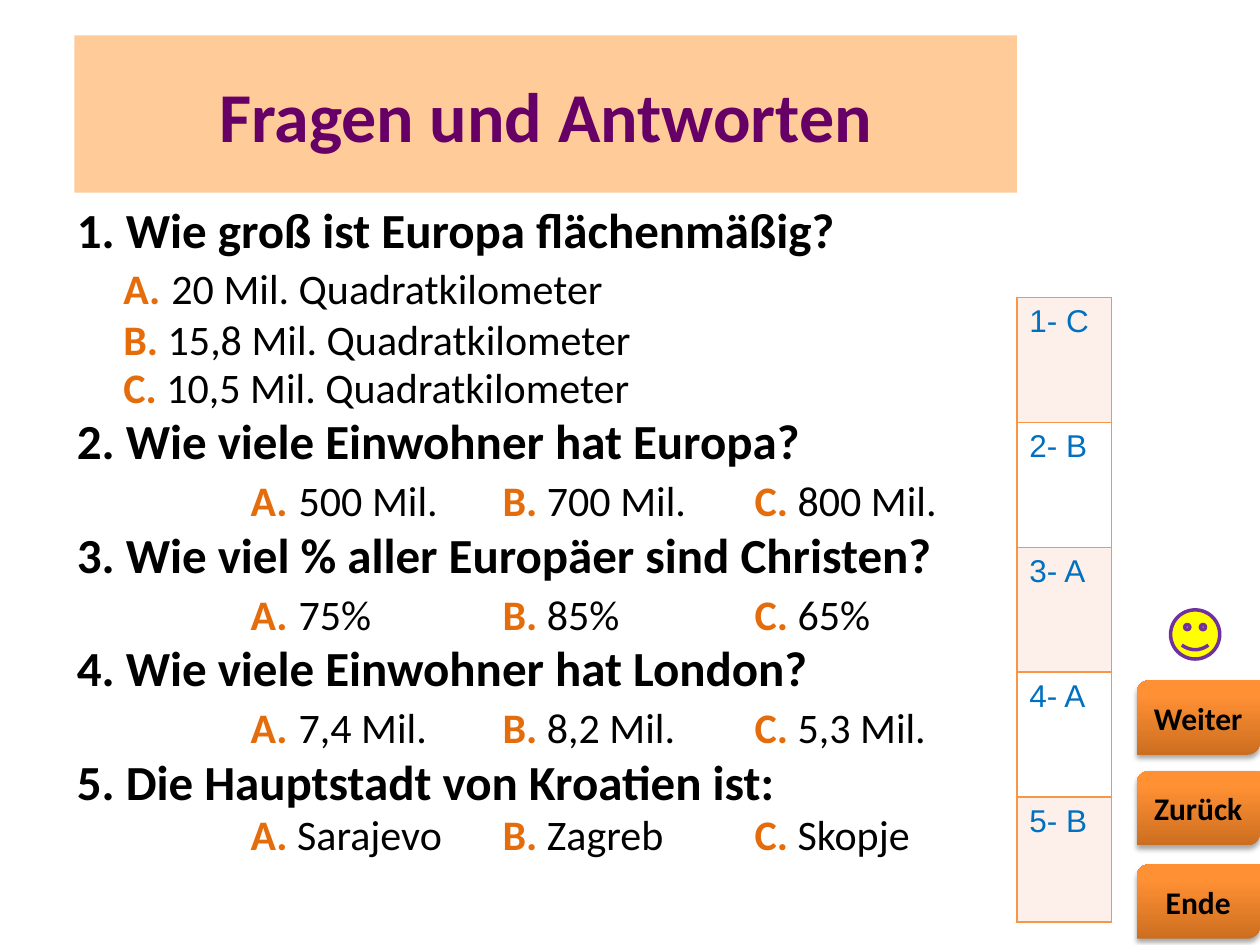
import copy

import pptx
import pptx.dml.color
import pptx.enum.shapes
import pptx.enum.text
import pptx.oxml
import pptx.oxml.ns
import pptx.util
from pptx.util import Inches

RGBColor = pptx.dml.color.RGBColor
BLACK = RGBColor(0x00, 0x00, 0x00)
WHITE = RGBColor(0xFF, 0xFF, 0xFF)
PEACH = RGBColor(0xFF, 0xCC, 0x99)
PURPLE = RGBColor(0x66, 0x00, 0x66)
ORANGE = RGBColor(0xE4, 0x6C, 0x0A)
YELLOW = RGBColor(0xFF, 0xFF, 0x00)
VIOLET = RGBColor(0x70, 0x30, 0xA0)
BLUE = RGBColor(0x00, 0x70, 0xC0)
BLUSH = RGBColor(0xFD, 0xEF, 0xE9)
BORDER = RGBColor(0xF7, 0x96, 0x46)
GRADIENT = [(0, RGBColor(0xCC, 0x6E, 0x20)), (0.8, RGBColor(0xFF, 0x90, 0x34)),
            (1, RGBColor(0xFF, 0x91, 0x36))]

QUESTIONS = [
    ("1. Wie groß ist Europa flächenmäßig?",
     ["20 Mil. Quadratkilometer", "15,8 Mil. Quadratkilometer", "10,5 Mil. Quadratkilometer"]),
    ("2. Wie viele Einwohner hat Europa?", ["500 Mil.", "700 Mil.", "800 Mil."]),
    ("3. Wie viel % aller Europäer sind Christen?", ["75%", "85%", "65%"]),
    ("4. Wie viele Einwohner hat London?", ["7,4 Mil.", "8,2 Mil.", "5,3 Mil."]),
    ("5. Die Hauptstadt von Kroatien ist:", ["Sarajevo", "Zagreb", "Skopje"]),
]
ANSWERS = ["1- C", "2- B", "3- A", "4- A", "5- B"]
BUTTONS = [("Weiter", 5.4), ("Zurück", 6.12), ("Ende", 6.86)]
OPTION_MARGIN = 1.38
OPTION_STEP = 2
A_NS = pptx.oxml.ns.nsdecls("a")


def place(box, left, top, width, height):
    """Set position and size in inches."""
    box.left, box.top = Inches(left), Inches(top)
    box.width, box.height = Inches(width), Inches(height)


def fill_solid(target, color):
    """Fill a shape or cell with one colour."""
    target.fill.solid()
    target.fill.fore_color.rgb = color


def add_span(para, text, size, color=BLACK, bold=False, font="Calibri"):
    """Append one formatted run."""
    span = para.add_run()
    span.text = text
    span.font.size = pptx.util.Pt(size)
    span.font.color.rgb = color
    span.font.bold = bold
    span.font.name = font


def add_para(frame, margin, hanging=0):
    """Return a new unbulleted body paragraph, reusing the empty first one."""
    first = frame.paragraphs[0]
    para = frame.add_paragraph() if first.runs else first
    props = para._p.get_or_add_pPr()
    props.set("marL", str(Inches(margin)))
    props.set("indent", str(-Inches(hanging)))
    para.line_spacing = 0.8
    if para._p is first._p:
        para.space_before = 0
    props.append(pptx.oxml.parse_xml(f"<a:buNone {A_NS}/>"))
    return para


def add_option_row(frame):
    """Return a paragraph with evenly spaced columns for three options."""
    para = add_para(frame, OPTION_MARGIN)
    props = para._p.get_or_add_pPr()
    props.set("defTabSz", str(Inches(OPTION_STEP)))
    stops = "".join(f'<a:tab pos="{Inches(OPTION_MARGIN + OPTION_STEP * column)}" algn="l"/>'
                    for column in (1, 2))
    props.append(pptx.oxml.parse_xml(f"<a:tabLst {A_NS}>{stops}</a:tabLst>"))
    return para


def add_option(para, letter, text, gap_size=24):
    """Append a coloured letter and its answer text."""
    add_span(para, f"{letter}.", 24, ORANGE, True)
    add_span(para, " ", gap_size)
    add_span(para, text, 24)


def add_title(page):
    """Format the title placeholder."""
    box = page.shapes.title
    place(box, 0.59, 0.28, 7.48, 1.25)
    fill_solid(box, PEACH)
    box.text_frame.vertical_anchor = pptx.enum.text.MSO_ANCHOR.MIDDLE
    para = box.text_frame.paragraphs[0]
    para.alignment = pptx.enum.text.PP_ALIGN.CENTER
    add_span(para, "Fragen und Antworten", 40, PURPLE, True)


def add_questions(page):
    """Fill the body placeholder with questions and options."""
    box = page.placeholders[1]
    place(box, 0.51, 1.62, 7.96, 5.75)
    fill_solid(box, WHITE)
    frame = box.text_frame
    frame.auto_size = pptx.enum.text.MSO_AUTO_SIZE.NONE
    for number, (question, options) in enumerate(QUESTIONS):
        add_span(add_para(frame, 0.38, 0.38), question, 28, bold=True)
        first_gap = 24 if number == len(QUESTIONS) - 1 else 28
        row = None if number == 0 else add_option_row(frame)
        for letter, option in zip("ABC", options):
            para = row or add_para(frame, 0.37)
            if row and letter != "A":
                add_span(para, "\t", 24)
            add_option(para, letter, option, first_gap if letter == "A" else 24)


def add_button(page, label, top):
    """Draw one gradient navigation button."""
    kind = pptx.enum.shapes.MSO_SHAPE.ROUND_2_DIAG_RECTANGLE
    box = page.shapes.add_shape(kind, Inches(9.02), Inches(top), Inches(0.98), Inches(0.59))
    box.fill.gradient()
    box.fill.gradient_angle = 90
    stop_list = box._element.spPr.find(pptx.oxml.ns.qn("a:gradFill")).gsLst
    stop_list.append(copy.deepcopy(stop_list[-1]))
    for stop, (position, color) in zip(box.fill.gradient_stops, GRADIENT):
        stop.position = position
        stop.color.rgb = color
    box.line.fill.background()
    box.shadow.inherit = False
    effects = box._element.spPr.find(pptx.oxml.ns.qn("a:effectLst"))
    effects.append(pptx.oxml.parse_xml(
        f'<a:outerShdw {A_NS} blurRad="{pptx.util.Pt(3.1)}" dist="{pptx.util.Pt(1.8)}" '
        'dir="5400000" rotWithShape="0"><a:srgbClr val="000000">'
        '<a:alpha val="35000"/></a:srgbClr></a:outerShdw>'))
    box.text_frame.vertical_anchor = pptx.enum.text.MSO_ANCHOR.MIDDLE
    para = box.text_frame.paragraphs[0]
    para.alignment = pptx.enum.text.PP_ALIGN.CENTER
    add_span(para, label, 18, bold=True)


def add_smiley(page):
    """Draw the smiley face."""
    face = page.shapes.add_shape(pptx.enum.shapes.MSO_SHAPE.SMILEY_FACE, Inches(9.29),
                                 Inches(4.84), Inches(0.39), Inches(0.39))
    fill_solid(face, YELLOW)
    face.line.color.rgb = VIOLET
    face.line.width = pptx.util.Pt(2)
    face.shadow.inherit = False


def add_borders(cell):
    """Outline all four sides of a cell."""
    props = cell._tc.get_or_add_tcPr()
    for index, side in enumerate(("lnL", "lnR", "lnT", "lnB")):
        props.insert(index, pptx.oxml.parse_xml(
            f'<a:{side} {A_NS} w="{pptx.util.Pt(1)}"><a:solidFill>'
            f'<a:srgbClr val="{BORDER}"/></a:solidFill></a:{side}>'))


def add_answers(page):
    """Add the answer table."""
    grid = page.shapes.add_table(len(ANSWERS), 1, Inches(8.07), Inches(2.36),
                                 Inches(0.75), Inches(4.96)).table
    grid.first_row = False
    for index, answer in enumerate(ANSWERS):
        cell = grid.cell(index, 0)
        fill_solid(cell, WHITE if index % 2 else BLUSH)
        add_borders(cell)
        add_span(cell.text_frame.paragraphs[0], answer, 18, BLUE, font="Arial")


def main():
    """Build and save the quiz slide."""
    deck = pptx.Presentation()
    deck.slide_width, deck.slide_height = Inches(10), Inches(7.5)
    page = deck.slides.add_slide(deck.slide_layouts[1])
    add_title(page)
    add_questions(page)
    for label, top in BUTTONS:
        add_button(page, label, top)
    add_smiley(page)
    add_answers(page)
    deck.save("out.pptx")


if __name__ == "__main__":
    main()
